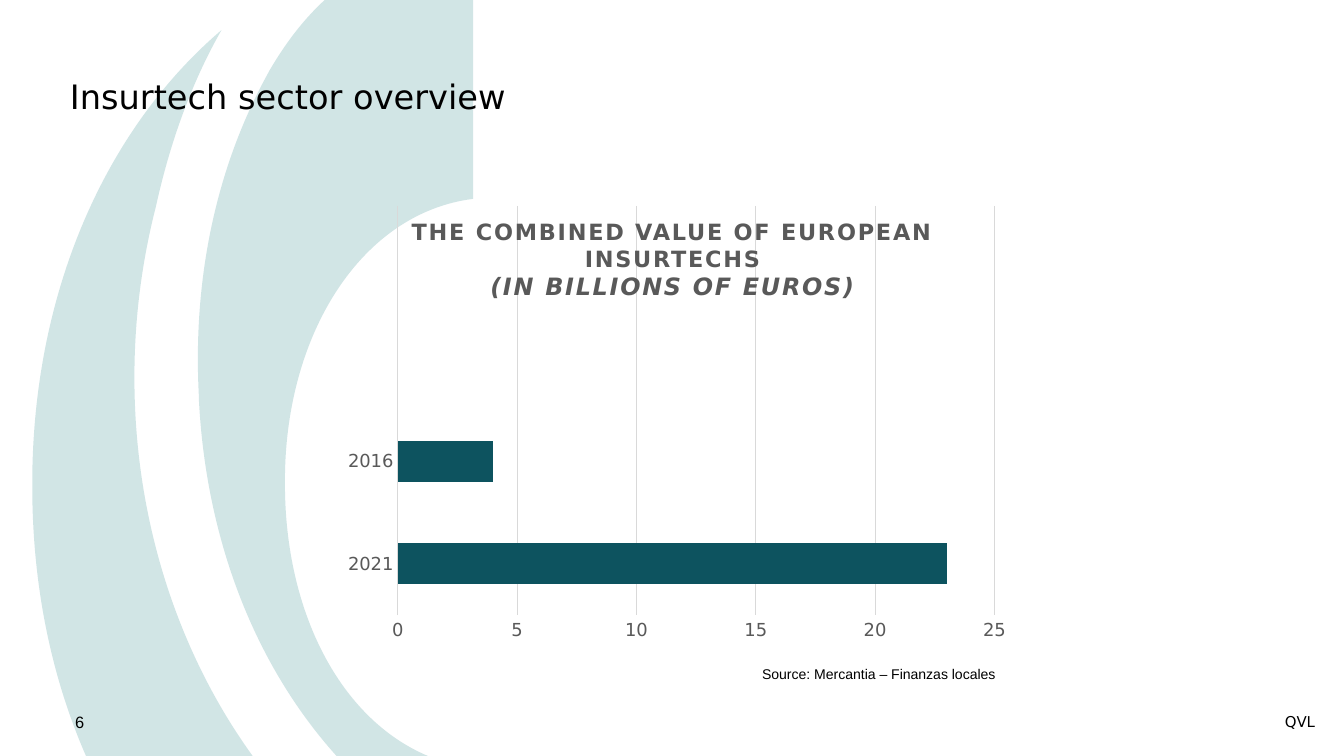
from lxml.etree import SubElement
from pptx import Presentation
from pptx.chart.data import CategoryChartData
from pptx.dml.color import RGBColor
from pptx.enum.chart import XL_CHART_TYPE, XL_TICK_MARK
from pptx.enum.text import MSO_ANCHOR, PP_ALIGN
from pptx.oxml import parse_xml
from pptx.oxml.ns import nsdecls, qn
from pptx.util import Inches, Pt

BLACK = RGBColor(0x00, 0x00, 0x00)
GRAY = RGBColor(0x59, 0x59, 0x59)
GRID = RGBColor(0xD9, 0xD9, 0xD9)
TEAL = RGBColor(0x1B, 0x7D, 0x81)
BAR = RGBColor(0x0D, 0x53, 0x5F)
SANS = "DejaVu Sans"
ARIAL = "Arial"

# Each outline is a start point and segments: one point for a line, three for a Bézier curve.
INNER_ARC = ((2.19, 7.03), [
    [(1.38, 6.69), (0.86, 5.7), (0.86, 4.5)], [(0.86, 4.47)],
    [(0.86, 3.11), (1.57, 1.98), (2.61, 1.85)], [(2.61, 0)], [(1.23, 0)],
    [(0.97, 0.24), (0.81, 0.5), (0.72, 0.65)], [(0.65, 0.78)],
    [(0.22, 1.6), (0, 2.6), (0.06, 3.69)], [(0.06, 3.72)],
    [(0.13, 5.07), (0.61, 6.22), (1.34, 7.03)]])
OUTER_ARC = ((0.95, 3.23), [
    [(0.95, 2.68), (1.02, 2.15), (1.15, 1.64)], [(1.28, 1.05), (1.48, 0.49), (1.76, 0)],
    [(0.67, 0.93), (0, 2.46), (0, 4.22)], [(0, 4.24)],
    [(0, 5.17), (0.18, 6.02), (0.5, 6.75)], [(2.05, 6.75)],
    [(1.37, 5.81), (0.95, 4.58), (0.95, 3.23)]])


def format_font(font, **values):
    font.color.rgb = values.pop("color", BLACK)
    for name, value in values.items():
        setattr(font, name, value)


def bend_segments(shape, segments):
    """Turn each run of three lines that belongs to a curve into one Bézier segment."""
    lines = iter(list(shape._element.iter(qn("a:lnTo"))))
    for segment in segments:
        first, *others = [next(lines) for _ in segment]
        if others:
            curve = first.getparent().makeelement(qn("a:cubicBezTo"))
            first.addprevious(curve)
            for line in (first, *others):
                curve.append(line[0])
                line.getparent().remove(line)


def add_arc(slide, left, top, outline):
    start, segments = outline
    points = [(Inches(left + x), Inches(top + y))
              for x, y in (start, *(point for segment in segments for point in segment))]
    builder = slide.shapes.build_freeform(*points[0])
    builder.add_line_segments(points[1:], close=True)
    shape = builder.convert_to_shape()
    bend_segments(shape, segments)
    shape.shadow.inherit = False
    shape.line.fill.background()
    shape.fill.solid()
    shape.fill.fore_color.rgb = TEAL
    color = shape._element.spPr.find(qn("a:solidFill"))[0]
    SubElement(color, qn("a:alpha"), val="20000")


def add_title(slide, left, top, width, height):
    title = slide.shapes.title
    slide.shapes._spTree.append(title._element)  # in front of the arcs
    for name, value in dict(left=left, top=top, width=width, height=height).items():
        setattr(title, name, Inches(value))
    title.text_frame.text = "Insurtech sector overview"
    title.text_frame.vertical_anchor = MSO_ANCHOR.MIDDLE
    paragraph = title.text_frame.paragraphs[0]
    paragraph.alignment = PP_ALIGN.LEFT
    paragraph.line_spacing = Pt(22.5)
    format_font(paragraph.runs[0].font, name=SANS, size=Pt(22.5))


def add_text(slide, left, top, width, height, lines, align=PP_ALIGN.LEFT,
             anchor=MSO_ANCHOR.TOP, wrap=True, margin=None, spacing=None):
    """Add a text box; lines are pairs of text and font values."""
    box = slide.shapes.add_textbox(Inches(left), Inches(top), Inches(width), Inches(height))
    frame = box.text_frame
    frame.word_wrap = wrap
    frame.vertical_anchor = anchor
    if margin is not None:
        for side in ("left", "top", "right", "bottom"):
            setattr(frame, f"margin_{side}", Inches(margin))
    for index, (text, values) in enumerate(lines):
        paragraph = frame.add_paragraph() if index else frame.paragraphs[0]
        paragraph.alignment = align
        run = paragraph.add_run()
        run.text = text
        format_font(run.font, **values)
        if spacing:
            run.font._element.set("spc", str(spacing))


def add_value_chart(slide, left, top, width, height):
    data = CategoryChartData()
    data.categories = ["2021", "2016", "", ""]
    data.add_series("Series 1", [23, 4, None, None])
    chart = slide.shapes.add_chart(XL_CHART_TYPE.BAR_STACKED, Inches(left), Inches(top),
                                   Inches(width), Inches(height), data).chart
    chart.has_legend = False
    chart.has_title = False
    format_font(chart.font, name=SANS, size=Pt(10))

    plot = chart.plots[0]
    for name, value in dict(gap_width=150, overlap=100, vary_by_categories=False).items():
        setattr(plot, name, value)
    fill = plot.series[0].format.fill
    fill.solid()
    fill.fore_color.rgb = BAR

    for axis in (chart.category_axis, chart.value_axis):
        axis.major_tick_mark = axis.minor_tick_mark = XL_TICK_MARK.NONE
        format_font(axis.tick_labels.font, name=SANS, size=Pt(12), color=GRAY)
    value_axis = chart.value_axis
    for name, value in dict(minimum_scale=0, maximum_scale=25, major_unit=5,
                            has_major_gridlines=True).items():
        setattr(value_axis, name, value)
    value_axis.format.line.fill.background()
    for line in (chart.category_axis.format.line, value_axis.major_gridlines.format.line):
        line.color.rgb = GRID
        line.width = Pt(0.75)

    plot_area = chart._chartSpace.chart.plotArea
    for old_layout in plot_area.findall(qn("c:layout")):
        plot_area.remove(old_layout)
    modes = '<c:layoutTarget val="inner"/><c:xMode val="edge"/><c:yMode val="edge"/>'
    shares = dict(x=0.62 / width, y=0, w=5.55 / width, h=3.81 / height)
    sizes = "".join(f'<c:{name} val="{share}"/>' for name, share in shares.items())
    plot_area.insert(0, parse_xml(f'<c:layout {nsdecls("c")}><c:manualLayout>{modes}{sizes}'
                                  '</c:manualLayout></c:layout>'))


def add_chart_region(slide, left, top):
    add_value_chart(slide, left + 0.12, top, 6.33, 4.32)
    heading = dict(name=SANS, bold=True, color=GRAY)
    add_text(slide, left, top + 0.07, 6.59, 0.87, [
        ("THE COMBINED VALUE OF EUROPEAN INSURTECHS", dict(heading, size=Pt(15))),
        ("(IN BILLIONS OF EUROS)", dict(heading, size=Pt(16), italic=True)),
    ], align=PP_ALIGN.CENTER, spacing=120)
    add_text(slide, left + 4.03, top + 4.23, 2.43, 0.26,
             [("Source: Mercantia – Finanzas locales", dict(name=ARIAL, size=Pt(9.4)))], wrap=False)


def add_footer(slide, left, top):
    add_text(slide, left, top + 0.19, 0.44, 0.26, [("6", dict(name=ARIAL, size=Pt(11)))])
    add_text(slide, left + 8.09, top, 3.54, 0.65, [("QVL", dict(name=SANS, size=Pt(10)))],
             align=PP_ALIGN.RIGHT, anchor=MSO_ANCHOR.MIDDLE, margin=0)


def main():
    presentation = Presentation()
    presentation.slide_width = Inches(12.5)
    presentation.slide_height = Inches(7.03)
    slide = presentation.slides.add_slide(presentation.slide_layouts[5])
    add_arc(slide, 1.79, 0, INNER_ARC)
    add_arc(slide, 0.3, 0.28, OUTER_ARC)
    add_title(slide, 0.55, 0.55, 7.34, 0.74)
    add_chart_region(slide, 2.96, 1.91)
    add_footer(slide, 0.6, 6.38)
    presentation.save("out.pptx")


if __name__ == "__main__":
    main()
